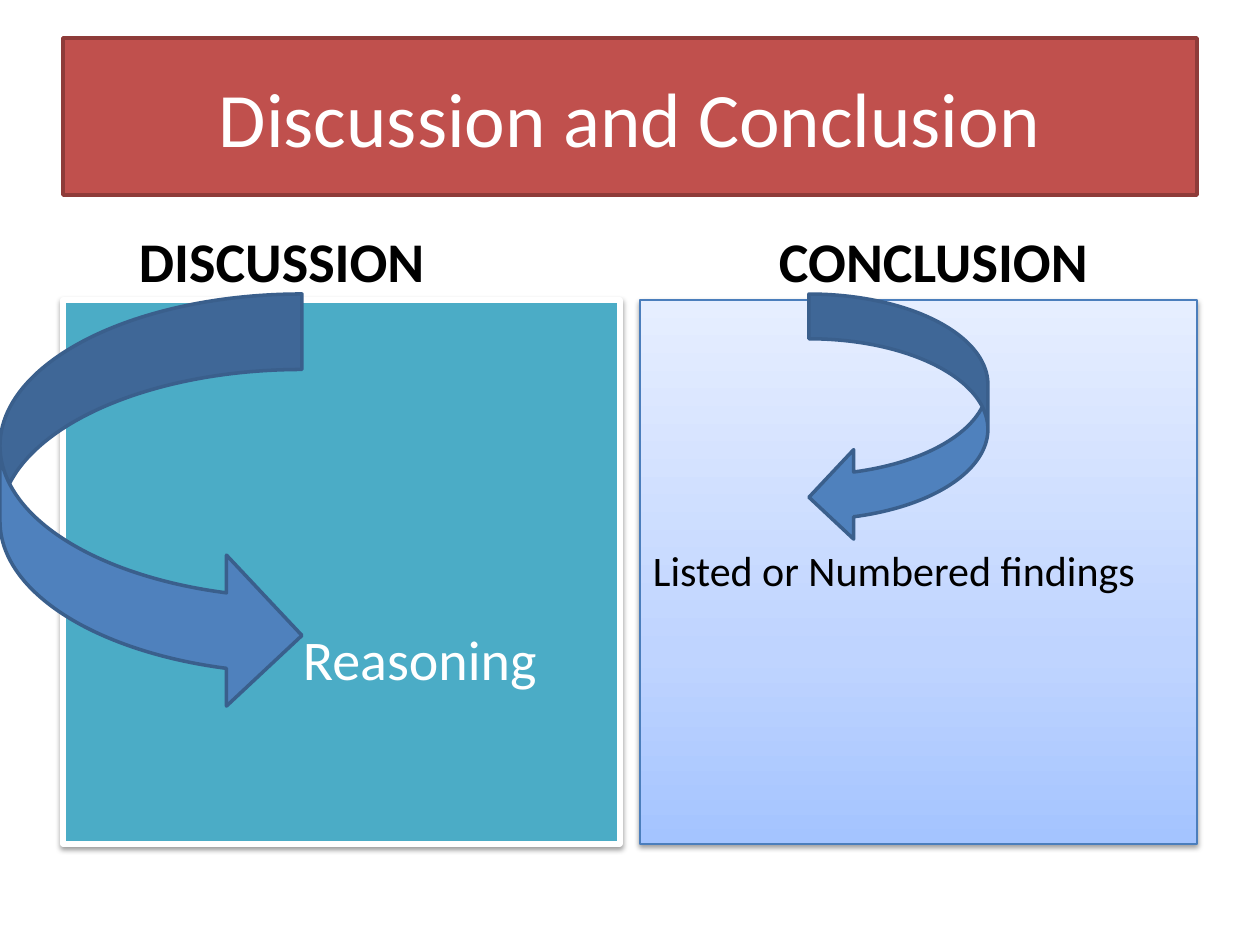
"""Build the Discussion and Conclusion slide."""
from copy import deepcopy
from dataclasses import dataclass

from lxml.etree import SubElement
from pptx import Presentation
from pptx.dml.color import RGBColor as RGB
from pptx.enum.shapes import MSO_SHAPE as SHAPE
from pptx.enum.text import MSO_ANCHOR as ANCHOR, PP_ALIGN as ALIGN
from pptx.oxml.ns import qn
from pptx.util import Emu, Pt


@dataclass(frozen=True)
class Theme:
    font: str = "Calibri"
    title_size: int = 44
    large_size: int = 32
    small_size: int = 24
    light: str = "FFFFFF"
    dark: str = "000000"
    banner: str = "C0504D"
    banner_edge: str = "8E3B39"
    teal: str = "4BACC6"
    blue_edge: str = "4B7EBC"
    arrow: str = "4F81BD"
    arrow_edge: str = "3A5F8C"
    gradient: tuple = ((0, "A4C4FF"), (0.35, "BFD4FF"), (1, "E6EEFF"))


THEME = Theme()
COLUMN_WIDTH = 557
LEFT_COLUMN, RIGHT_COLUMN = 63, 640
HEADING_TOP, HEADING_HEIGHT = 212, 88
PANEL_TOP, PANEL_HEIGHT = 300, 544
ARROW_TOP = 294
INSET_X, INSET_Y = 13, 6


def px(length):
    return Emu(round(length * 914400 / 126))


def place(shape, left, top, width, height):
    shape.left, shape.top = px(left), px(top)
    shape.width, shape.height = px(width), px(height)


def paint(shape, fill, edge, edge_width):
    if isinstance(fill, str):
        shape.fill.solid()
        shape.fill.fore_color.rgb = RGB.from_string(fill)
    else:
        paint_gradient(shape.fill, fill)
    shape.line.color.rgb = RGB.from_string(edge)
    shape.line.width = Pt(edge_width)


def paint_gradient(fill, colours):
    fill.gradient()
    fill.gradient_angle = 90
    stop_list = fill._xPr.find(".//" + qn("a:gsLst"))
    stop_list.append(deepcopy(stop_list[0]))
    for stop, (position, colour) in zip(fill.gradient_stops, colours):
        stop.position = position
        stop.color.rgb = RGB.from_string(colour)


def cast_shadow(shape):
    effects = shape.element.spPr.find(qn("a:effectLst"))
    shadow = SubElement(effects, qn("a:outerShdw"), blurRad="40000",
                        dist="20000", dir="5400000", rotWithShape="0")
    tint = SubElement(shadow, qn("a:srgbClr"), val=THEME.dark)
    SubElement(tint, qn("a:alpha"), val="38000")


def write(shape, wording, size, colour, anchor, align=ALIGN.LEFT,
          indent=INSET_X, drop=INSET_Y, bold=False):
    frame = shape.text_frame
    frame.word_wrap = True
    frame.vertical_anchor = anchor
    frame.margin_left, frame.margin_right = px(indent), px(INSET_X)
    frame.margin_top, frame.margin_bottom = px(drop), px(INSET_Y)
    paragraph = frame.paragraphs[0]
    paragraph.text = wording
    paragraph.alignment = align
    font = paragraph.font
    font.name, font.size, font.bold = THEME.font, Pt(size), bold
    font.color.rgb = RGB.from_string(colour)


def add_title(slide, wording):
    title = slide.shapes.title
    place(title, 63, 38, 1134, 157)
    paint(title, THEME.banner, THEME.banner_edge, 2)
    write(title, wording, THEME.title_size, THEME.light, ANCHOR.MIDDLE,
          ALIGN.CENTER)


def add_heading(slide, left, wording, indent):
    heading = slide.shapes.add_textbox(
        px(left), px(HEADING_TOP), px(COLUMN_WIDTH), px(HEADING_HEIGHT))
    write(heading, wording, THEME.large_size, THEME.dark, ANCHOR.BOTTOM,
          indent=indent, bold=True)


def add_preset(slide, preset, box, fill, edge, edge_width):
    shape = slide.shapes.add_shape(preset, *map(px, box))
    shape.shadow.inherit = False
    paint(shape, fill, edge, edge_width)
    return shape


def add_panel(slide, left, fill, edge, edge_width, **text):
    box = (left, PANEL_TOP, COLUMN_WIDTH, PANEL_HEIGHT)
    panel = add_preset(slide, SHAPE.RECTANGLE, box, fill, edge, edge_width)
    cast_shadow(panel)
    write(panel, anchor=ANCHOR.TOP, **text)


def add_arrow(slide, preset, left, width, height):
    add_preset(slide, preset, (left, ARROW_TOP, width, height),
               THEME.arrow, THEME.arrow_edge, 2)


def main():
    deck = Presentation()
    deck.slide_width, deck.slide_height = px(1260), px(945)
    slide = deck.slides.add_slide(deck.slide_layouts[5])
    add_title(slide, "Discussion and Conclusion")

    add_heading(slide, LEFT_COLUMN, "DISCUSSION", indent=76)
    add_panel(slide, LEFT_COLUMN, THEME.teal, THEME.light, 3,
              wording="Reasoning", size=THEME.large_size,
              colour=THEME.light, indent=240, drop=325)

    add_heading(slide, RIGHT_COLUMN, "CONCLUSION", indent=139)
    add_panel(slide, RIGHT_COLUMN, THEME.gradient, THEME.blue_edge, 0.75,
              wording="Listed or Numbered findings", size=THEME.small_size,
              colour=THEME.dark, drop=245)

    add_arrow(slide, SHAPE.CURVED_RIGHT_ARROW, 0, 302, 417)
    add_arrow(slide, SHAPE.CURVED_LEFT_ARROW, 809, 179, 248)
    deck.save("out.pptx")


if __name__ == "__main__":
    main()
